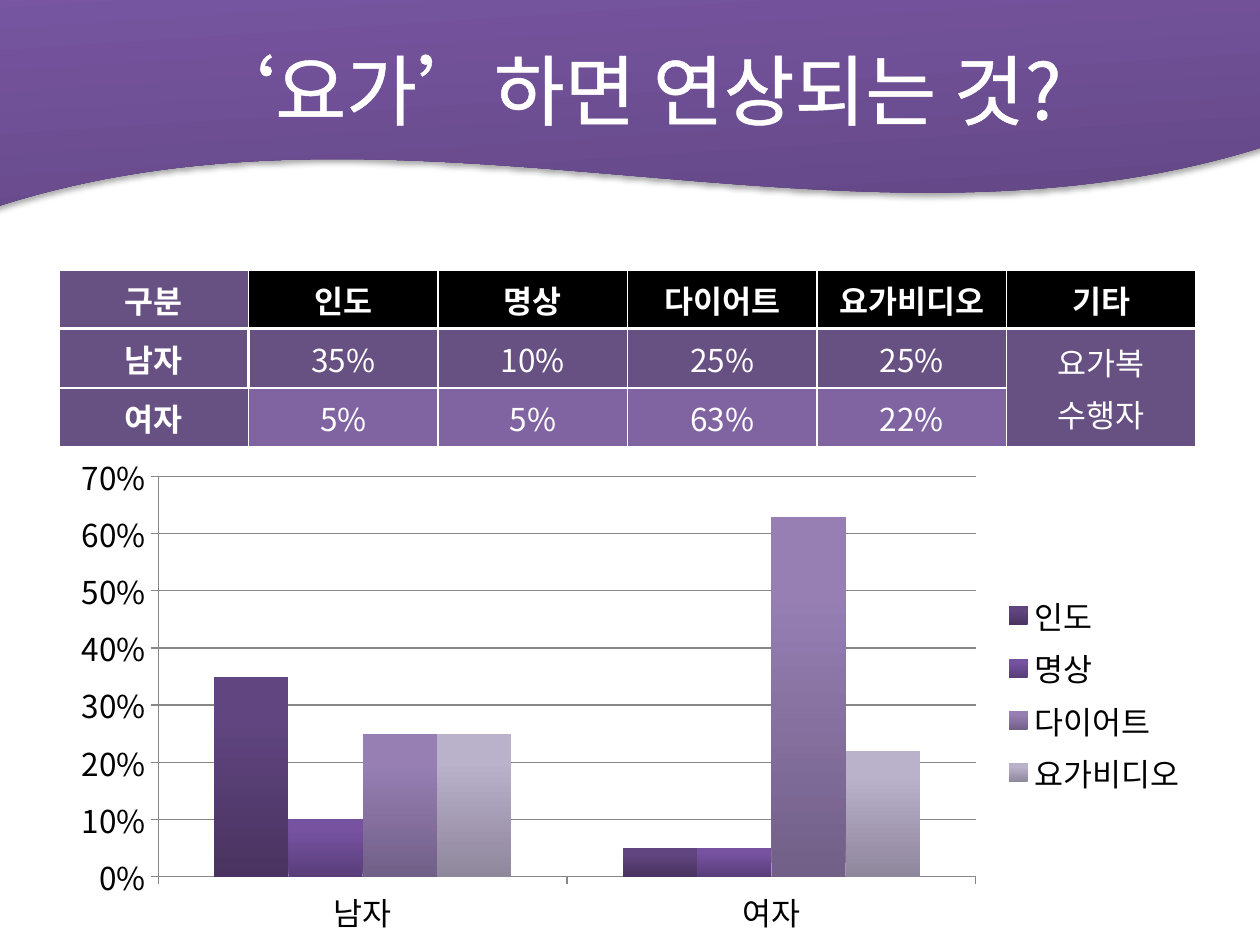
"""Build the slide on what men and women associate with yoga."""
from lxml import etree
from pptx import Presentation
from pptx.chart.data import CategoryChartData
from pptx.dml.color import RGBColor
from pptx.enum.chart import XL_CHART_TYPE, XL_LEGEND_POSITION, XL_TICK_MARK
from pptx.enum.shapes import MSO_SHAPE
from pptx.enum.text import MSO_ANCHOR, PP_ALIGN
from pptx.oxml import parse_xml
from pptx.oxml.ns import nsdecls, qn
from pptx.util import Cm, Pt

CLUSTERED = XL_CHART_TYPE.COLUMN_CLUSTERED
LEGEND_RIGHT = XL_LEGEND_POSITION.RIGHT
TICK_OUT = XL_TICK_MARK.OUTSIDE
WAVE = MSO_SHAPE.WAVE
MIDDLE = MSO_ANCHOR.MIDDLE
CENTER = PP_ALIGN.CENTER

FONT = "Noto Sans CJK KR"
WHITE = RGBColor(0xFF, 0xFF, 0xFF)
BLACK = RGBColor(0x00, 0x00, 0x00)
GRID_GRAY = RGBColor(0x87, 0x87, 0x87)
DARK_PURPLE = RGBColor(0x67, 0x50, 0x82)
MID_PURPLE = RGBColor(0x80, 0x64, 0xA2)
WAVE_COLORS = (RGBColor(0x5F, 0x44, 0x80), RGBColor(0x7B, 0x58, 0xA6))
SERIES_COLORS = (
    (RGBColor(0x4A, 0x33, 0x60), RGBColor(0x60, 0x45, 0x80)),
    (RGBColor(0x59, 0x3E, 0x7A), RGBColor(0x76, 0x52, 0xA0)),
    (RGBColor(0x72, 0x60, 0x88), RGBColor(0x97, 0x7F, 0xB4)),
    (RGBColor(0x8F, 0x87, 0x9C), RGBColor(0xBA, 0xB1, 0xCB)),
)

TOPICS = ("인도", "명상", "다이어트", "요가비디오")
SHARES = {"남자": (0.35, 0.10, 0.25, 0.25), "여자": (0.05, 0.05, 0.63, 0.22)}
OTHERS = ("요가복", "수행자")


def style_paragraph(para, size, bold=False):
    """Centre a paragraph and set its white font for both scripts."""
    para.alignment = CENTER
    para.font.size = Pt(size)
    para.font.bold = bold
    para.font.color.rgb = WHITE
    para.font.name = FONT
    properties = para._p.get_or_add_pPr().find(qn("a:defRPr"))
    etree.SubElement(properties, qn("a:ea"), typeface=FONT)


def fill_upward(fill, colors):
    """Fade from the dark colour at the bottom to the light one."""
    fill.gradient()
    fill.gradient_angle = 90
    for stop, color, position in zip(fill.gradient_stops, colors, (0, 0.8)):
        stop.color.rgb = color
        stop.position = position


def add_wave(slide):
    """Add the tilted purple wave behind the title."""
    wave = slide.shapes.add_shape(WAVE, Cm(-0.99), Cm(-2.18), Cm(27.18), Cm(6.55))
    wave.rotation = 356.3
    fill_upward(wave.fill, WAVE_COLORS)
    wave.line.fill.background()
    wave._element.spPr.append(parse_xml(
        f'<a:effectLst {nsdecls("a")}>'
        '<a:outerShdw blurRad="40000" dist="23000" dir="5400000" rotWithShape="0">'
        '<a:srgbClr val="000000"><a:alpha val="35000"/></a:srgbClr>'
        '</a:outerShdw></a:effectLst>'))
    slide.shapes._spTree.insert(2, wave._element)


def set_title(slide, text):
    """Place the outlined title in its placeholder."""
    title = slide.shapes.title
    title.left, title.top, title.width, title.height = Cm(1.27), Cm(0.2), Cm(22.86), Cm(3.18)
    title.text_frame.vertical_anchor = MIDDLE
    para = title.text_frame.paragraphs[0]
    span = para.add_run()
    span.text = text
    style_paragraph(para, 44)
    span._r.get_or_add_rPr().insert(0, parse_xml(
        f'<a:ln {nsdecls("a")} w="{Pt(1.45)}"><a:solidFill>'
        f'<a:srgbClr val="{WHITE}"/></a:solidFill></a:ln>'))


def fill_cell(cell, lines, color, bold=False):
    """Write centred lines into a filled cell."""
    cell.fill.solid()
    cell.fill.fore_color.rgb = color
    cell.vertical_anchor = MIDDLE
    cell.text_frame.text = "\n".join(lines)
    for index, para in enumerate(cell.text_frame.paragraphs):
        style_paragraph(para, 18, bold)
        if index:
            para.space_before = Pt(3.6)


def add_border(cell, side):
    """Draw a white border on one side (lnR or lnB) of a cell."""
    cell._tc.get_or_add_tcPr().insert(0, parse_xml(
        f'<a:{side} {nsdecls("a")} w="{Pt(2)}"><a:solidFill>'
        f'<a:srgbClr val="{WHITE}"/></a:solidFill></a:{side}>'))


def add_share_table(slide):
    """Add the table of shares by gender."""
    header = ("구분", *TOPICS, "기타")
    frame = slide.shapes.add_table(
        len(SHARES) + 1, len(header), Cm(1.19), Cm(5.44), Cm(22.92), Cm(3.57))
    table = frame.table
    for column, text in enumerate(header):
        cell = table.cell(0, column)
        fill_cell(cell, [text], BLACK if column else DARK_PURPLE, True)
        add_border(cell, "lnB")
    colors = (DARK_PURPLE, MID_PURPLE)
    for row, ((gender, shares), color) in enumerate(zip(SHARES.items(), colors), 1):
        fill_cell(table.cell(row, 0), [gender], DARK_PURPLE, True)
        for column, share in enumerate(shares, 1):
            fill_cell(table.cell(row, column), [f"{share:.0%}"], color)
    add_border(table.cell(1, 0), "lnR")
    others = table.cell(1, len(header) - 1)
    others.merge(table.cell(2, len(header) - 1))
    fill_cell(others, OTHERS, DARK_PURPLE)


def add_share_chart(slide):
    """Add the clustered columns of the same shares."""
    data = CategoryChartData(number_format="0%")
    data.categories = list(SHARES)
    for topic, values in zip(TOPICS, zip(*SHARES.values())):
        data.add_series(topic, values)
    chart = slide.shapes.add_chart(
        CLUSTERED, Cm(1.19), Cm(8.94), Cm(23.01), Cm(10.11), data).chart
    chart.has_title = False
    chart.font.name = FONT
    chart.font.size = Pt(18)
    chart.font.color.rgb = BLACK
    chart.has_legend = True
    chart.legend.position = LEGEND_RIGHT
    chart.legend.include_in_layout = False

    for axis in (chart.category_axis, chart.value_axis):
        axis.major_tick_mark = TICK_OUT
        axis.format.line.color.rgb = GRID_GRAY
    scale = chart.value_axis
    scale.minimum_scale, scale.maximum_scale, scale.major_unit = 0, 0.7, 0.1
    scale.tick_labels.number_format = "0%"
    scale.tick_labels.number_format_is_linked = False
    scale.has_major_gridlines = True
    scale.major_gridlines.format.line.color.rgb = GRID_GRAY

    plot = chart.plots[0]
    plot.gap_width = 150
    plot.overlap = 0
    plot.vary_by_categories = False
    for series, colors in zip(plot.series, SERIES_COLORS):
        fill_upward(series.format.fill, colors)


def main():
    """Build and save the deck."""
    deck = Presentation()
    deck.slide_width, deck.slide_height = Cm(25.4), Cm(19.05)
    slide = deck.slides.add_slide(deck.slide_layouts[5])
    add_wave(slide)
    set_title(slide, "‘요가’하면 연상되는 것?")
    add_share_table(slide)
    add_share_chart(slide)
    deck.save("out.pptx")


if __name__ == "__main__":
    main()
